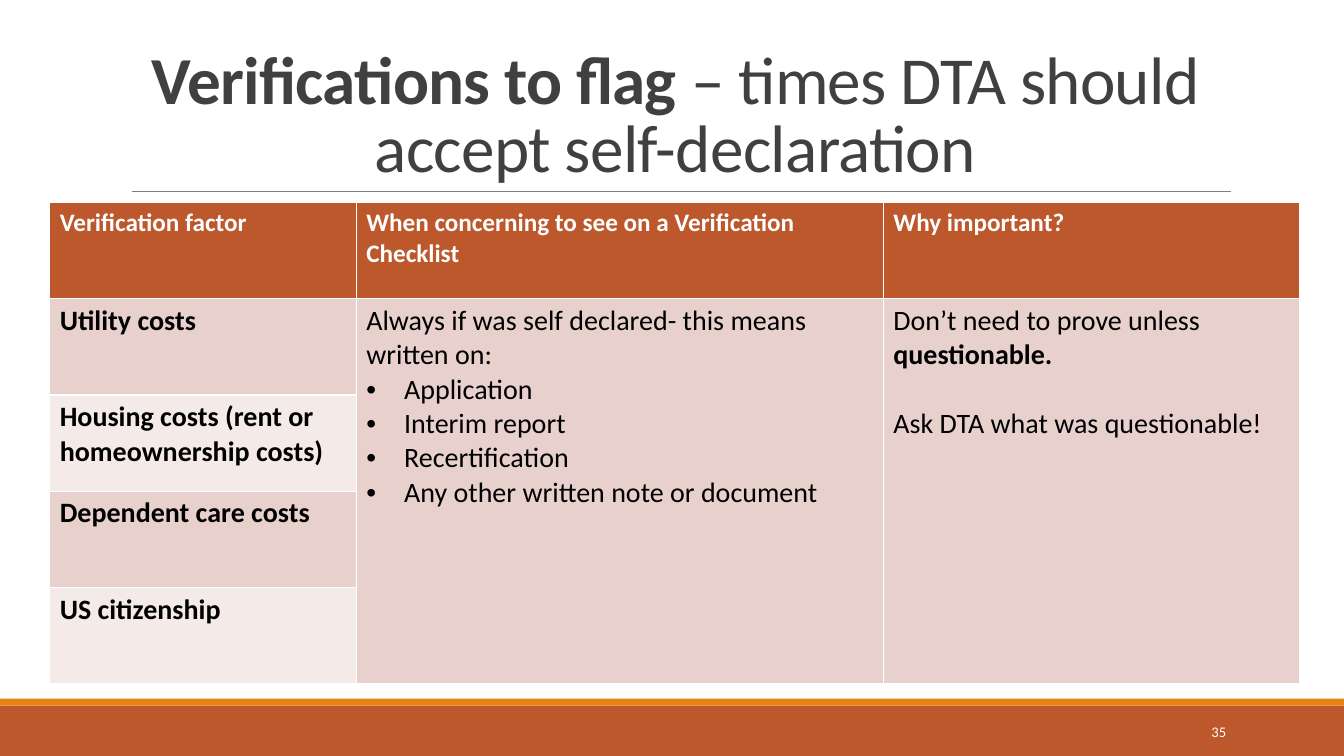
"""Builds a slide with a table of verifications that allow self-declaration."""
import pptx
import pptx.dml.color
import pptx.enum.shapes
import pptx.enum.text
import pptx.oxml.ns
import pptx.util
from lxml import etree

Pt = pptx.util.Pt
ALIGN = pptx.enum.text.PP_ALIGN
ANCHOR = pptx.enum.text.MSO_ANCHOR
COLORS = {
    "rust": "BD582C",
    "orange": "E48312",
    "rule": "808080",
    "title": "404040",
    "white": "FFFFFF",
    "black": "000000",
    "dark band": "E8D1CD",
    "light band": "F4EAE8",
}
HEADERS = ["Verification factor", "When concerning to see on a Verification Checklist", "Why important?"]
FACTORS = ["Utility costs", "Housing costs (rent or homeownership costs)",
           "Dependent care costs", "US citizenship"]
WRITTEN_ON = ["Application", "Interim report", "Recertification", "Any other written note or document"]
COLUMN_WIDTHS = [219, 376.5, 297.5]
BULLET_INDENT = 27


def color(name):
    """Return the named colour."""
    return pptx.dml.color.RGBColor.from_string(COLORS[name])


def paint(filled, name):
    """Give a shape or cell a solid fill."""
    filled.fill.solid()
    filled.fill.fore_color.rgb = color(name)


def write(paragraph, runs, size, color_name, bold=None):
    """Write (text, bold) runs into a paragraph; a plain string is one run."""
    if isinstance(runs, str):
        runs = [(runs, bold)]
    paragraph.font.size = Pt(size)
    paragraph.font.name = "Calibri"
    paragraph.font.color.rgb = color(color_name)
    for text, run_bold in runs:
        run = paragraph.add_run()
        run.text = text
        run.font.size = Pt(size)
        run.font.name = "Calibri"
        run.font.color.rgb = color(color_name)
        run.font.bold = run_bold


def add_bullet(paragraph):
    """Put a hanging bullet before a paragraph."""
    properties = paragraph._p.get_or_add_pPr()
    properties.set("marL", str(Pt(BULLET_INDENT)))
    properties.set("indent", str(-Pt(BULLET_INDENT)))
    font = etree.Element(pptx.oxml.ns.qn("a:buFont"), typeface="Arial")
    bullet = etree.Element(pptx.oxml.ns.qn("a:buChar"), char="•")
    defaults = properties.find(pptx.oxml.ns.qn("a:defRPr"))
    defaults.addprevious(font)
    defaults.addprevious(bullet)


def add_text_box(slide, left, top, width, height, anchor):
    """Add a wrapping text box and return its first paragraph."""
    frame = slide.shapes.add_textbox(Pt(left), Pt(top), Pt(width), Pt(height)).text_frame
    frame.word_wrap = True
    frame.vertical_anchor = anchor
    return frame.paragraphs[0]


def add_title(slide, left, top, width, height):
    """Add the title and the rule beneath it."""
    rule_left, rule_top = left + 8, top + height
    rule = slide.shapes.add_connector(pptx.enum.shapes.MSO_CONNECTOR.STRAIGHT, Pt(rule_left),
                                      Pt(rule_top), Pt(rule_left + 785), Pt(rule_top))
    rule.line.color.rgb = color("rule")
    rule.line.width = Pt(0.5)
    etree.SubElement(rule._element.spPr, pptx.oxml.ns.qn("a:effectLst"))
    paragraph = add_text_box(slide, left, top, width, height, ANCHOR.BOTTOM)
    paragraph.alignment = ALIGN.CENTER
    paragraph.line_spacing = 0.85
    write(paragraph, [("Verifications to flag ", True),
                      ("– times DTA should accept self-declaration", False)], 48, "title")
    for run in paragraph.runs:
        run.font._element.set("spc", "-50")


def add_verification_table(slide, left, top, width, height):
    """Add the table, with the last two columns merged below the header."""
    row_count = len(FACTORS) + 1
    table = slide.shapes.add_table(row_count, len(HEADERS), Pt(left), Pt(top), Pt(width), Pt(height)).table
    for column, column_width in zip(table.columns, COLUMN_WIDTHS):
        column.width = Pt(column_width)
    for row_index, row in enumerate(table.rows):
        row.height = Pt(height / row_count)
        band = "rust" if row_index == 0 else "dark band" if row_index % 2 else "light band"
        for cell in row.cells:
            paint(cell, band)
    for column_index, header in enumerate(HEADERS):
        write(table.cell(0, column_index).text_frame.paragraphs[0], header, 18, "white", True)
    for row_index, factor in enumerate(FACTORS, 1):
        write(table.cell(row_index, 0).text_frame.paragraphs[0], factor, 20, "black", True)
    for column_index in (1, 2):
        table.cell(1, column_index).merge(table.cell(row_count - 1, column_index))

    concern = table.cell(1, 1).text_frame
    write(concern.paragraphs[0], "Always if was self declared- this means written on:", 20, "black", False)
    for place in WRITTEN_ON:
        paragraph = concern.add_paragraph()
        write(paragraph, place, 20, "black", False)
        add_bullet(paragraph)

    reason = table.cell(1, 2).text_frame
    write(reason.paragraphs[0], [("Don’t need to prove unless ", False), ("questionable.", True)], 20, "black")
    question = reason.add_paragraph()
    question.space_before = Pt(24.4)
    write(question, "Ask DTA what was questionable!", 20, "black", False)


def add_footer(slide, left, top, width, height):
    """Add the two footer bands and the slide number."""
    stripe = 5
    bands = [("rust", top + stripe, height - stripe), ("orange", top, stripe)]
    for name, band_top, band_height in bands:
        band = slide.shapes.add_shape(pptx.enum.shapes.MSO_SHAPE.RECTANGLE, Pt(left),
                                      Pt(band_top), Pt(width), Pt(band_height))
        band.shadow.inherit = False
        paint(band, name)
        band.line.fill.background()
    paragraph = add_text_box(slide, left + 780, top + 9.5, 103, 28.8, ANCHOR.MIDDLE)
    paragraph.alignment = ALIGN.RIGHT
    write(paragraph, "35", 10.5, "white")


def main():
    """Build and save the presentation."""
    presentation = pptx.Presentation()
    presentation.slide_width = Pt(960)
    presentation.slide_height = Pt(540)
    slide = presentation.slides.add_slide(presentation.slide_layouts[6])
    add_footer(slide, 0, 499, 960, 41)
    add_title(slide, 86.4, 22.5, 792, 114.2)
    add_verification_table(slide, 35.5, 144.8, sum(COLUMN_WIDTHS), 343.5)
    presentation.save("out.pptx")


if __name__ == "__main__":
    main()
